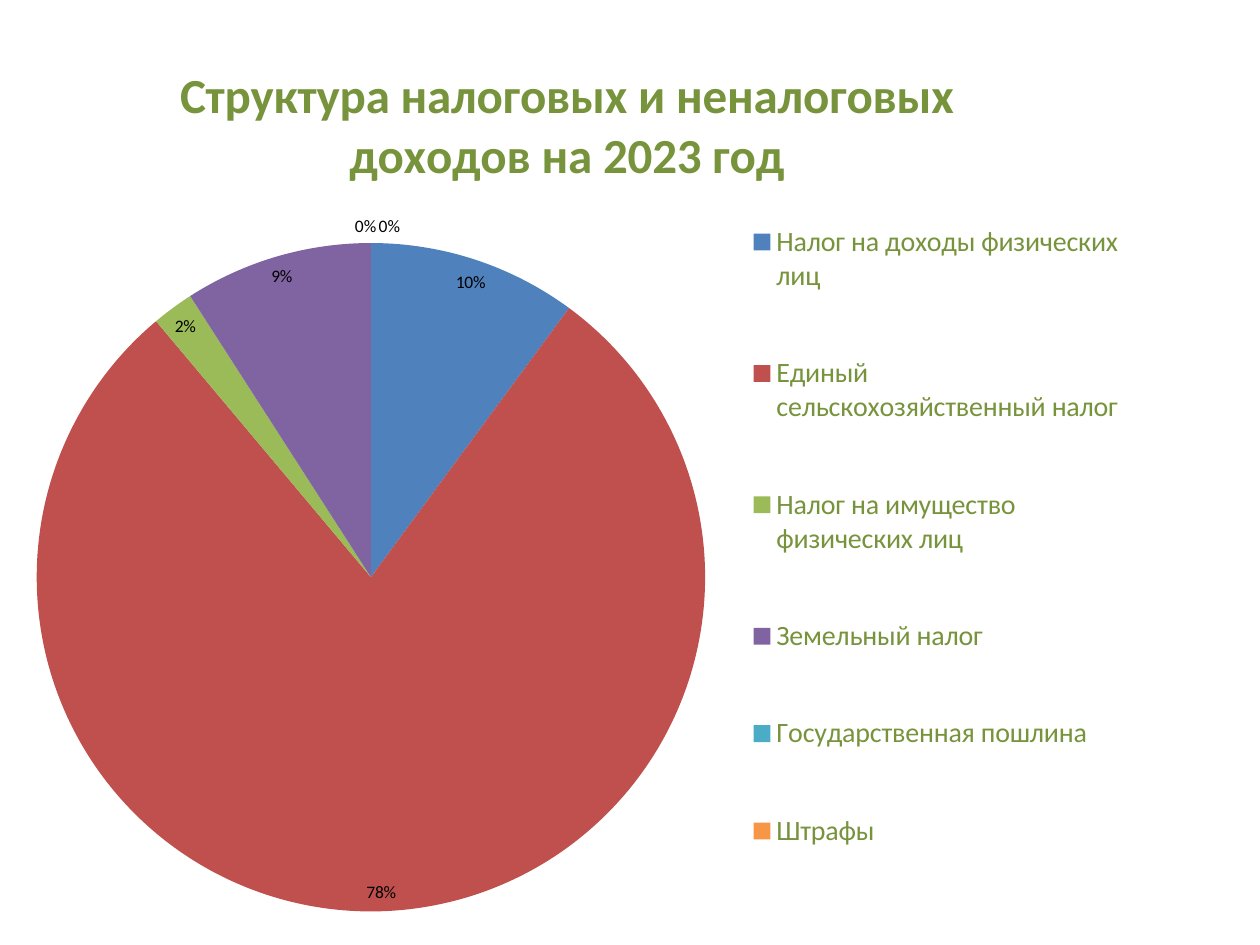
from lxml import etree
from pptx import Presentation
from pptx.chart.data import CategoryChartData
from pptx.dml.color import RGBColor
from pptx.enum import chart as kinds
from pptx.enum import text
from pptx.oxml import ns
from pptx.util import Cm, Pt

GREEN = RGBColor(0x77, 0x93, 0x3C)
BLACK = RGBColor(0x00, 0x00, 0x00)
SLICE_COLOURS = [
    RGBColor(0x4F, 0x81, 0xBD),
    RGBColor(0xC0, 0x50, 0x4D),
    RGBColor(0x9B, 0xBB, 0x59),
    RGBColor(0x80, 0x64, 0xA2),
    RGBColor(0x4B, 0xAC, 0xC6),
    RGBColor(0xF7, 0x96, 0x46),
]
TITLE = "Структура налоговых и неналоговых доходов на 2023 год"
REVENUES = {
    "Налог на доходы физических лиц": 10,
    "Единый сельскохозяйственный налог": 78,
    "Налог на имущество физических лиц": 2,
    "Земельный налог": 9,
    "Государственная пошлина": 0,
    "Штрафы": 0,
}
NONZERO_PERCENT = '0"%";;'


def place(element, index, **settings):
    for old in element.findall(ns.qn("c:layout")):
        element.remove(old)
    layout = etree.Element(ns.qn("c:layout"))
    manual = etree.SubElement(layout, ns.qn("c:manualLayout"))
    for name, value in settings.items():
        etree.SubElement(manual, ns.qn(f"c:{name}")).set("val", str(value))
    element.insert(index, layout)


def style(font, size, colour):
    font.name = "Calibri"
    font.size = Pt(size)
    font.color.rgb = colour


deck = Presentation()
deck.slide_width, deck.slide_height = Cm(25.4), Cm(19.05)
page = deck.slides.add_slide(deck.slide_layouts[6])

data = CategoryChartData(number_format=NONZERO_PERCENT)
data.categories = list(REVENUES)
data.add_series(TITLE, list(REVENUES.values()))
pie = page.shapes.add_chart(
    kinds.XL_CHART_TYPE.PIE, Cm(0), Cm(0.53), Cm(23.01), Cm(18.21), data
).chart
style(pie.font, 10, BLACK)

pie.has_title = True
heading = pie.chart_title
heading.text_frame.text = TITLE
span = heading.text_frame.paragraphs[0].runs[0]
style(span.font, 28, GREEN)
span.font.bold = True
heading.include_in_layout = False

pie.has_legend = True
legend = pie.legend
legend.position = kinds.XL_LEGEND_POSITION.RIGHT
legend.include_in_layout = False
style(legend.font, 16, GREEN)

plot = pie.plots[0]
plot.vary_by_categories = True
for point_number, colour in enumerate(SLICE_COLOURS):
    fill = plot.series[0].points[point_number].format.fill
    fill.solid()
    fill.fore_color.rgb = colour

plot.has_data_labels = True
labels = plot.data_labels
labels.show_value = True
labels.number_format = NONZERO_PERCENT
labels.number_format_is_linked = False
labels.position = kinds.XL_LABEL_POSITION.BEST_FIT
style(labels.font, 10, BLACK)

area = pie.element.find(".//" + ns.qn("c:plotArea"))
place(area, 0, layoutTarget="inner", xMode="edge", yMode="edge", x=0.03, y=0.24, w=0.59, h=0.74)
place(legend._element, 1, xMode="edge", yMode="edge", x=0.65, y=0.15, w=0.34, h=0.83)
place(heading._element, 1, xMode="edge", yMode="edge", x=0.15, y=0.03)

zeros = [value for value in REVENUES.values() if value == 0]
for position, value in enumerate(zeros):
    box = page.shapes.add_textbox(Cm(7.07 + 0.48 * position), Cm(4.3), Cm(0.6), Cm(0.5))
    frame = box.text_frame
    frame.margin_left = frame.margin_right = frame.margin_top = frame.margin_bottom = 0
    frame.vertical_anchor = text.MSO_ANCHOR.MIDDLE
    frame.text = f"{value}%"
    para = frame.paragraphs[0]
    para.alignment = text.PP_ALIGN.CENTER
    style(para.runs[0].font, 10, BLACK)

deck.save("out.pptx")
